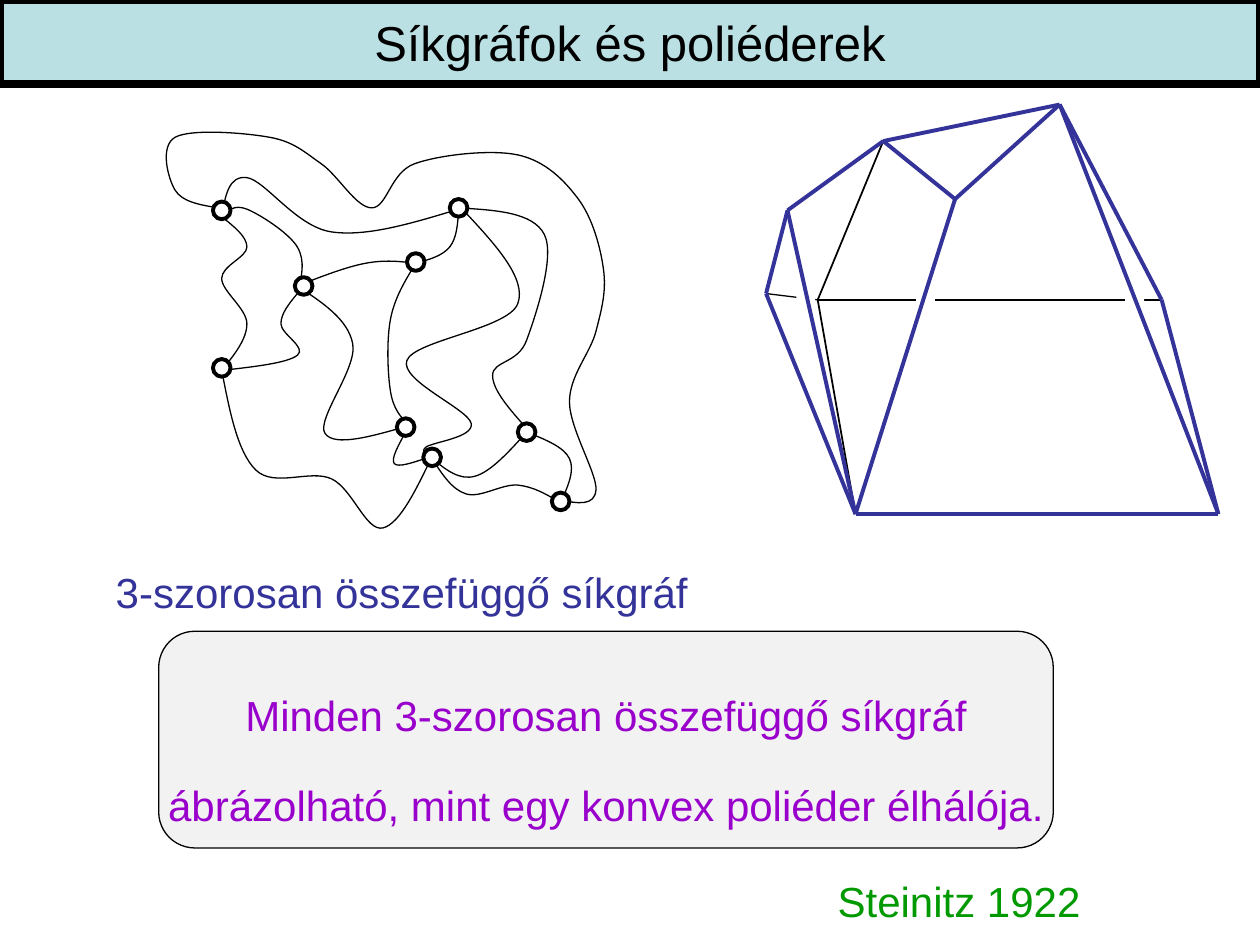
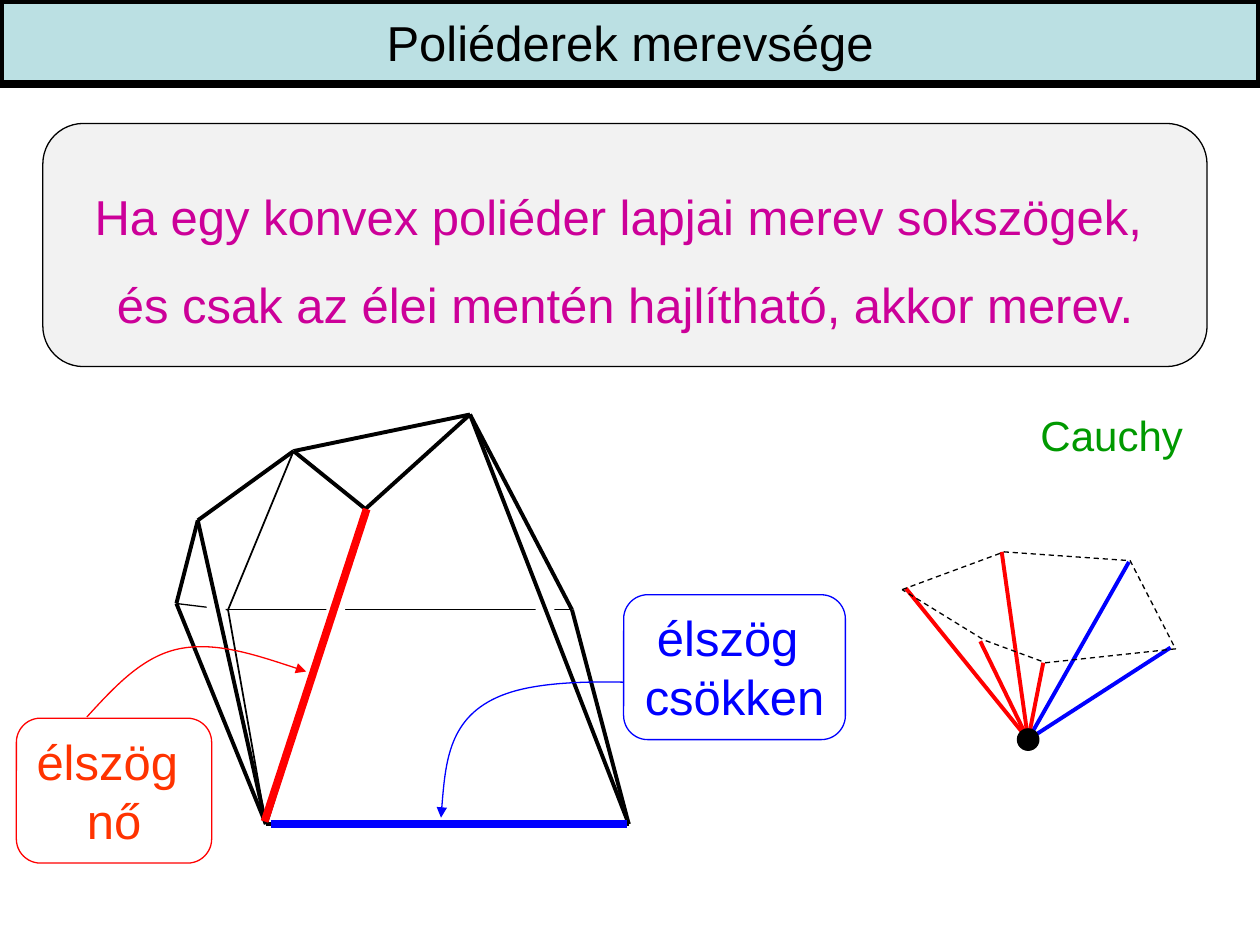
"""Two slides on planar graphs and the rigidity of convex polyhedra."""
from dataclasses import dataclass
from typing import NamedTuple, Optional

from lxml import etree
from pptx import Presentation
from pptx.dml.color import RGBColor
from pptx.enum.dml import MSO_LINE
from pptx.enum.shapes import MSO_CONNECTOR, MSO_SHAPE
from pptx.enum.text import MSO_ANCHOR, MSO_AUTO_SIZE, PP_ALIGN
from pptx.oxml.ns import qn
from pptx.util import Cm, Pt

RECT, ROUNDED, OVAL = MSO_SHAPE.RECTANGLE, MSO_SHAPE.ROUNDED_RECTANGLE, MSO_SHAPE.OVAL
STRAIGHT, DASH = MSO_CONNECTOR.STRAIGHT, MSO_LINE.DASH
LEFT, CENTER = PP_ALIGN.LEFT, PP_ALIGN.CENTER
TOP, MIDDLE = MSO_ANCHOR.TOP, MSO_ANCHOR.MIDDLE
GROW = MSO_AUTO_SIZE.SHAPE_TO_FIT_TEXT
GRID = Cm(2.54)


@dataclass(frozen=True)
class Theme:
    font: str = "Arial"
    body: int = 24
    large: int = 28
    thin: float = 0.75
    hidden: float = 1
    edge: float = 2.25
    heavy: float = 4.5
    black: str = "000000"
    white: str = "FFFFFF"
    band: str = "BBE0E3"
    panel: str = "F2F2F2"
    indigo: str = "333399"
    purple: str = "9900CC"
    magenta: str = "CC0099"
    green: str = "009900"
    red: str = "FF0000"
    orange: str = "FF3300"
    blue: str = "0000FF"


T = Theme()


class Point(NamedTuple):
    x: float
    y: float


class Box(NamedTuple):
    x: float
    y: float
    w: float
    h: float


class Edge(NamedTuple):
    start: str
    end: str
    width: float = T.edge


@dataclass(frozen=True)
class Text:
    lines: tuple[str, ...]
    color: str
    size: int = T.body
    align: PP_ALIGN = CENTER
    spacing: Optional[float] = None
    anchor: MSO_ANCHOR = MIDDLE
    wrap: bool = False
    grow: bool = False


NODE_SIZE = 0.14
NODES = [Point(4.18, 3.43), Point(3.3, 2.08), Point(1.76, 1.67), Point(2.41, 2.27),
         Point(1.76, 2.92), Point(3.22, 3.39), Point(3.43, 3.63), Point(4.45, 3.98),
         Point(3.64, 1.65)]

GRAPH_CURVES = [
    [(4.45, 3.97), (4.73, 3.89), (4.52, 3.19), (4.73, 2.63), (4.79, 2.14), (4.59, 1.58),
     (4.11, 1.23), (3.29, 1.3), (2.95, 1.65), (2.55, 1.3), (2.14, 1.09), (1.39, 1.09),
     (1.39, 1.51), (1.73, 1.65)],
    [(3.64, 1.65), (4.32, 1.86), (4.18, 2.7), (3.91, 2.98), (4.18, 3.4)],
    [(3.43, 3.64), (3.7, 3.92), (4.11, 3.85), (4.45, 3.99)],
    [(4.18, 3.43), (4.52, 3.64), (4.45, 3.99)],
    [(4.18, 3.43), (3.77, 3.78), (3.43, 3.64)],
    [(1.76, 1.72), (1.96, 1.96), (1.76, 2.21), (1.96, 2.57), (1.76, 2.94)],
    [(1.76, 1.72), (1.96, 1.41), (2.63, 1.84), (3.64, 1.66)],
    [(3.67, 1.66), (4.11, 2.41), (3.23, 2.86), (3.74, 3.36), (3.38, 3.55), (3.45, 3.61)],
    [(1.76, 2.94), (2.03, 3.73), (2.63, 3.8), (3.04, 4.19), (3.44, 3.6)],
    [(1.76, 1.72), (1.96, 1.66), (2.36, 1.96), (2.36, 2.33)],
    [(1.76, 2.94), (2.36, 2.82), (2.23, 2.57), (2.36, 2.33)],
    [(2.36, 2.27), (2.9, 2.09), (3.3, 2.09)],
    [(3.64, 1.66), (3.57, 1.96), (3.3, 2.09)],
    [(3.3, 2.09), (3.1, 2.53), (3.1, 3.11), (3.24, 3.37)],
    [(3.22, 3.43), (3.13, 3.68), (3.4, 3.63)],
    [(3.24, 3.38), (2.58, 3.44), (2.8, 2.73), (2.36, 2.27)],
]

CORNERS = {
    "base_left": Point(6.79, 4.08), "base_right": Point(9.67, 4.08),
    "back_left": Point(6.49, 2.38), "back_right": Point(9.22, 2.38),
    "ridge": Point(7.01, 1.12), "front": Point(7.58, 1.58), "apex": Point(8.41, 0.83),
    "side": Point(6.08, 2.33), "shoulder": Point(6.25, 1.67),
}
HIDDEN_EDGES = [
    Edge("back_left", "base_left", T.hidden), Edge("ridge", "back_left", T.hidden),
    Edge("back_left", "back_right", T.thin), Edge("back_left", "side", T.thin),
]
VISIBLE_EDGES = [
    Edge("base_left", "base_right"), Edge("back_right", "base_right"),
    Edge("front", "base_left"), Edge("ridge", "front"), Edge("ridge", "apex"),
    Edge("front", "apex"), Edge("apex", "back_right"), Edge("base_right", "apex"),
    Edge("side", "base_left"), Edge("side", "shoulder"), Edge("ridge", "shoulder"),
    Edge("base_left", "shoulder"),
]
GAPS = [Box(7.27, 2.26, 0.15, 0.22), Box(8.93, 2.31, 0.15, 0.15), Box(6.32, 2.28, 0.15, 0.22)]
RIGID_SHIFT = Point(-4.68, 2.46)

FAN_TIP = Point(8.16, 5.87)
FAN = [
    (Point(7.19, 4.67), T.red), (Point(7.95, 4.38), T.red), (Point(8.96, 4.46), T.blue),
    (Point(9.29, 5.14), T.blue), (Point(7.78, 5.09), T.red), (Point(8.28, 5.26), T.red),
]
FAN_RIM = [(7.16, 4.68), (7.97, 4.38), (8.97, 4.45), (9.33, 5.15), (8.3, 5.26), (7.81, 5.08)]


def grid(value: float) -> int:
    """Turn grid units into a length."""
    return round(value * GRID)


def shifted(point: Point, by: Point) -> Point:
    """Move a point."""
    return Point(point.x + by.x, point.y + by.y)


def write(sp, text: Text) -> None:
    """Fill a shape with formatted paragraphs."""
    tf = sp.text_frame
    tf.word_wrap = text.wrap
    tf.vertical_anchor = text.anchor
    if text.grow:
        tf.auto_size = GROW
    for i, line in enumerate(text.lines):
        p = tf.paragraphs[0] if i == 0 else tf.add_paragraph()
        p.alignment = text.align
        if text.spacing:
            p.line_spacing = text.spacing
        r = p.add_run()
        r.text = line
        for font in (p.font, r.font):
            font.name, font.size = T.font, Pt(text.size)
            font.color.rgb = RGBColor.from_string(text.color)


def set_line(sp, color: str, width: float) -> None:
    """Set the colour and width of an outline."""
    sp.line.color.rgb = RGBColor.from_string(color)
    sp.line.width = Pt(width)


def add_box(s, kind: MSO_SHAPE, box: Box, fill: Optional[str] = None,
            line: Optional[str] = None, width: float = T.thin, text: Optional[Text] = None):
    """Draw a preset shape with optional text."""
    sp = s.shapes.add_shape(kind, *map(grid, box))
    sp.shadow.inherit = False
    if fill:
        sp.fill.solid()
        sp.fill.fore_color.rgb = RGBColor.from_string(fill)
    else:
        sp.fill.background()
    if line:
        set_line(sp, line, width)
    else:
        sp.line.fill.background()
    if text:
        write(sp, text)
    return sp


def add_dot(s, center: Point, size: float, fill: str, width: float) -> None:
    """Draw a black-rimmed circle around a centre."""
    box = Box(center.x - size / 2, center.y - size / 2, size, size)
    add_box(s, OVAL, box, fill, T.black, width)


def add_label(s, box: Box, text: Text) -> None:
    """Draw a free text label."""
    write(s.shapes.add_textbox(*map(grid, box)), text)


def add_edge(s, start: Point, end: Point, color: str, width: float = T.edge) -> None:
    """Draw a straight line."""
    line = s.shapes.add_connector(STRAIGHT, *map(grid, (*start, *end)))
    set_line(line, color, width)
    etree.SubElement(line._element.spPr, qn("a:effectLst"))


def add_outline(s, points: list, color: str, close: bool = False):
    """Draw an unfilled freeform through points."""
    start, *rest = [(grid(x), grid(y)) for x, y in points]
    fb = s.shapes.build_freeform(*start, scale=1.0)
    fb.add_line_segments(rest, close=close)
    sp = fb.convert_to_shape()
    sp.shadow.inherit = False
    sp.fill.background()
    set_line(sp, color, T.thin)
    return sp


def mid(a: Point, b: Point) -> Point:
    """Return the middle of two points."""
    return Point((a.x + b.x) / 2, (a.y + b.y) / 2)


def spline(pairs: list) -> list[Point]:
    """Return the Bezier points of a smooth curve through the knots."""
    knots = [Point(*pair) for pair in pairs]
    points = []
    for before, knot, after in zip(knots, knots[1:], knots[2:]):
        dx, dy = (after.x - before.x) / 6, (after.y - before.y) / 6
        points += [Point(knot.x - dx, knot.y - dy), knot, Point(knot.x + dx, knot.y + dy)]
    first, last = knots[0], knots[-1]
    return [first, mid(first, points[0]), *points, mid(points[-1], last), last]


def add_curve(s, knots: list, color: str = T.black, arrow: bool = False) -> None:
    """Draw a smooth curve, with an arrowhead if asked."""
    sp = add_outline(s, spline(knots), color)
    outline = sp._element.spPr.find(".//" + qn("a:path"))
    segments = outline.findall(qn("a:lnTo"))
    for i in range(0, len(segments), 3):
        bezier = etree.SubElement(outline, qn("a:cubicBezTo"))
        for segment in segments[i:i + 3]:
            bezier.append(segment[0])
            outline.remove(segment)
    if arrow:
        etree.SubElement(sp._element.spPr.find(qn("a:ln")), qn("a:tailEnd"), type="triangle")


def add_polyhedron(s, color: str, by: Point = Point(0, 0)) -> None:
    """Draw the polyhedron with its hidden edges interrupted."""
    corners = {name: shifted(point, by) for name, point in CORNERS.items()}
    for edge in HIDDEN_EDGES:
        add_edge(s, corners[edge.start], corners[edge.end], T.black, edge.width)
    for gap in GAPS:
        add_box(s, RECT, Box(gap.x + by.x, gap.y + by.y, gap.w, gap.h), T.white)
    for edge in VISIBLE_EDGES:
        add_edge(s, corners[edge.start], corners[edge.end], color, edge.width)


def add_panel(s, box: Box, text: Text) -> None:
    """Draw the rounded panel of a theorem."""
    add_box(s, ROUNDED, box, T.panel, T.black, text=text)


def add_slide(prs, title: str):
    """Add a blank slide with the title band."""
    s = prs.slides.add_slide(prs.slide_layouts[6])
    add_box(s, RECT, Box(0, 0, 10, 0.67), T.band, T.black, T.heavy,
            Text((title,), T.black, T.large, wrap=True))
    return s


def planar_graph_slide(prs) -> None:
    """Build the slide on planar graphs and polyhedra."""
    s = add_slide(prs, "Síkgráfok és poliéderek")
    add_label(s, Box(6.55, 6.58, 2.13, 0.5),
              Text(("Steinitz 1922",), T.green, align=LEFT, spacing=1.8, anchor=TOP, grow=True))
    add_panel(s, Box(1.26, 5.01, 7.1, 1.72),
              Text(("Minden 3-szorosan összefüggő síkgráf",
                    "ábrázolható, mint egy konvex poliéder élhálója."), T.purple, spacing=1.8))
    add_label(s, Box(0.82, 4.13, 4.79, 0.83),
              Text(("3-szorosan összefüggő síkgráf",), T.indigo, align=LEFT, spacing=1.8,
                   anchor=TOP, grow=True))
    for knots in GRAPH_CURVES:
        add_curve(s, knots)
    for node in NODES:
        add_dot(s, node, NODE_SIZE, T.white, T.edge)
    add_polyhedron(s, T.indigo)


def rigidity_slide(prs) -> None:
    """Build the slide on the rigidity of polyhedra."""
    s = add_slide(prs, "Poliéderek merevsége")
    add_label(s, Box(8.16, 3.2, 1.33, 0.5),
              Text(("Cauchy",), T.green, align=LEFT, anchor=TOP, grow=True))
    add_panel(s, Box(0.34, 0.98, 9.24, 1.93),
              Text(("Ha egy konvex poliéder lapjai merev sokszögek, ",
                    "és csak az élei mentén hajlítható, akkor merev."),
                   T.magenta, T.large, spacing=1.5))
    add_polyhedron(s, T.black, RIGID_SHIFT)
    add_edge(s, Point(2.15, 6.54), Point(4.98, 6.54), T.blue, T.heavy)
    add_curve(s, [(6.01, 5.48), (3.98, 5.52), (3.5, 6.49)], T.blue, arrow=True)
    add_box(s, ROUNDED, Box(4.95, 4.72, 1.76, 1.15), T.white, T.blue,
            text=Text(("élszög ", "csökken"), T.blue, T.large, anchor=TOP, grow=True))
    add_edge(s, Point(2.91, 4.04), Point(2.1, 6.52), T.red, T.heavy)
    add_curve(s, [(0.69, 5.69), (1.42, 5.15), (2.43, 5.33)], T.red, arrow=True)
    add_box(s, ROUNDED, Box(0.13, 5.7, 1.55, 1.15), None, T.red,
            text=Text(("élszög ", "nő"), T.orange, T.large, anchor=TOP, grow=True))
    for end, color in FAN:
        add_edge(s, end, FAN_TIP, color)
    add_outline(s, FAN_RIM, T.black, close=True).line.dash_style = DASH
    add_dot(s, FAN_TIP, 0.17, T.black, T.thin)


def main() -> None:
    """Build and save the presentation."""
    prs = Presentation()
    prs.slide_width, prs.slide_height = grid(10), grid(7.5)
    planar_graph_slide(prs)
    rigidity_slide(prs)
    prs.save("out.pptx")


if __name__ == "__main__":
    main()
